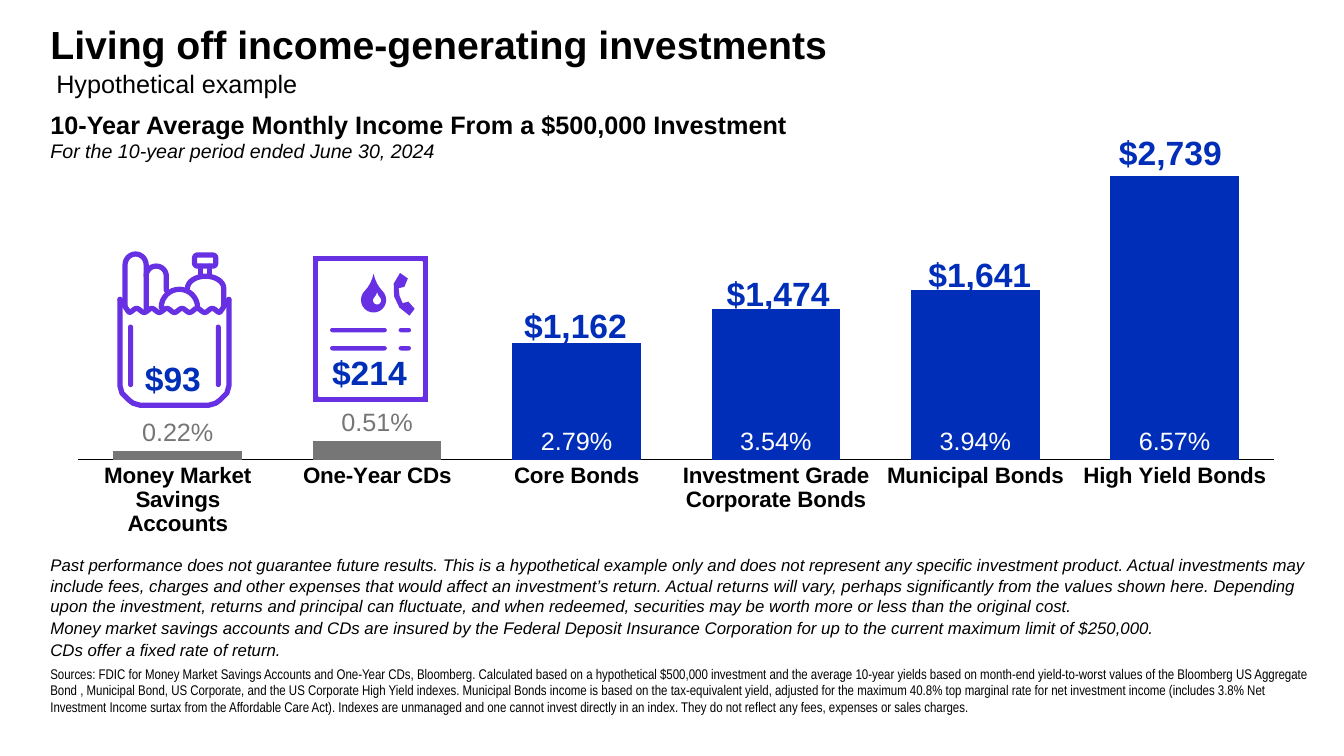
from math import cos, pi, sin

from lxml.etree import SubElement
from pptx import Presentation
from pptx.chart.data import CategoryChartData
from pptx.dml.color import RGBColor
from pptx.enum.chart import XL_CHART_TYPE, XL_LABEL_POSITION, XL_TICK_MARK
from pptx.enum.shapes import MSO_SHAPE
from pptx.enum.text import MSO_ANCHOR, PP_ALIGN
from pptx.oxml import parse_xml
from pptx.oxml.ns import nsdecls, qn
from pptx.util import Inches, Pt

COLORS = {"black": "000000", "white": "FFFFFF", "blue": "002EB8", "gray": "767676", "purple": "6730E3"}

BARS = [
    ("Money Market Savings Accounts", 0.002, "0.22%"),
    ("One-Year CDs", 0.0043, "0.51%"),
    ("Core Bonds", 0.0265, "2.79%"),
    ("Investment Grade Corporate Bonds", 0.0342, "3.54%"),
    ("Municipal Bonds", 0.0385, "3.94%"),
    ("High Yield Bonds", 0.0644, "6.57%"),
]
SAVINGS_COUNT = 2
CHART_BOX = (0.58, 1.31, 12.17, 4.01)
PLOT_LAYOUT = {"x": 0.016, "y": 0.047, "w": 0.975, "h": 0.767}

HEADINGS = [
    ((0.5, 0.2, 9.5, 0.85), [("Living off income-generating investments", 28, True, False)]),
    ((0.5, 1.08, 9.93, 0.74), [
        ("10-Year Average Monthly Income From a $500,000 Investment", 18, True, False),
        ("For the 10-year period ended June 30, 2024", 14, False, True),
    ]),
]
SUBTITLE = ((0.46, 0.63, 6.55, 0.4), [("Hypothetical example", 18, False, False)])
DISCLOSURES = [
    "Past performance does not guarantee future results. This is a hypothetical example only and does not represent any specific investment product. Actual investments may include fees, charges and other expenses that would affect an investment’s return. Actual returns will vary, perhaps significantly from the values shown here. Depending upon the investment, returns and principal can fluctuate, and when redeemed, securities may be worth more or less than the original cost.",
    "Money market savings accounts and CDs are insured by the Federal Deposit Insurance Corporation for up to the current maximum limit of $250,000.",
    "CDs offer a fixed rate of return.",
]
SOURCES = "Sources: FDIC for Money Market Savings Accounts and One-Year CDs, Bloomberg. Calculated based on a hypothetical $500,000 investment and the average 10-year yields based on month-end yield-to-worst values of the Bloomberg US Aggregate Bond , Municipal Bond, US Corporate, and the US Corporate High Yield indexes. Municipal Bonds income is based on the tax-equivalent yield, adjusted for the maximum 40.8% top marginal rate for net investment income (includes 3.8% Net Investment Income surtax from the Affordable Care Act). Indexes are unmanaged and one cannot invest directly in an index. They do not reflect any fees, expenses or sales charges."

BAG_INCOME = ("$93", (1.23, 3.5, 0.97, 0.5))
BILL_INCOME = ("$214", (3.15, 3.44, 1.03, 0.5))
BOND_INCOMES = [("$1,162", 5.1, 2.98), ("$1,474", 7.11, 2.66), ("$1,641", 9.11, 2.47), ("$2,739", 11, 1.26)]

BAG_CENTER = 1.73
BAG_SIDE = [(1.19, 2.97), (1.19, 3.83), (1.21, 3.9), (1.28, 3.97), (1.32, 4), (1.39, 4.02)]
GROCERIES = [
    {"left": 1.24, "right": 1.45, "spring": 2.63, "rise": 0.11, "feet": (3.03, 3.07)},
    {"left": 1.45, "right": 1.65, "spring": 2.74, "rise": 0.1, "feet": (2.74, 2.88)},
    {"left": 1.6, "right": 1.96, "spring": 3.05, "rise": 0.18, "feet": (3.05, 3.05)},
    {"left": 1.86, "right": 2.22, "spring": 2.86, "rise": 0.12, "feet": (2.86, 3.03)},
]
BOTTLE_CAP = (1.93, 2.53, 0.21, 0.11)
PHONE = [(3.94, 2.88), (3.97, 2.95), (4.02, 3.01), (4.07, 2.98), (4.15, 3.03), (4.12, 3.11), (4, 3.06),
         (3.92, 2.97), (3.88, 2.85), (3.91, 2.73), (4, 2.76), (3.99, 2.85)]


def color(name):
    return RGBColor.from_string(COLORS[name])


def set_font(font, size, name="black", bold=False, italic=False, face="Arial"):
    font.size, font.bold, font.italic, font.name = Pt(size), bold, italic, face
    font.color.rgb = color(name)


def add_text(shapes, box, lines, ink="black", face="Arial", margin=None, anchor=MSO_ANCHOR.TOP,
             align=PP_ALIGN.LEFT, after=0, wrap=True):
    frame = shapes.add_textbox(*map(Inches, box)).text_frame
    frame.word_wrap, frame.vertical_anchor = wrap, anchor
    if margin is not None:
        frame.margin_left = frame.margin_right = frame.margin_top = frame.margin_bottom = Inches(margin)
    for index, (text, size, bold, italic) in enumerate(lines):
        paragraph = frame.add_paragraph() if index else frame.paragraphs[0]
        paragraph.text, paragraph.alignment, paragraph.space_after = text, align, Pt(after)
        set_font(paragraph.font, size, ink, bold, italic, face)


def add_income(shapes, text, box, align=PP_ALIGN.CENTER, wrap=True):
    add_text(shapes, box, [(text, 24, True, False)], "blue", align=align, wrap=wrap)


def paint(shape, fill="purple", line=None, width=0):
    shape.shadow.inherit = False
    if fill:
        shape.fill.solid()
        shape.fill.fore_color.rgb = color(fill)
    else:
        shape.fill.background()
    if line:
        shape.line.color.rgb, shape.line.width = color(line), Pt(width)
        shape._element.spPr.find(qn("a:ln")).set("cap", "rnd")
    else:
        shape.line.fill.background()
    return shape


def add_preset(shapes, kind, box, adjustment, **style):
    shape = paint(shapes.add_shape(kind, *map(Inches, box)), **style)
    shape.adjustments[0] = adjustment
    return shape


def add_path(shapes, points, close=False, **style):
    start, *rest = [(Inches(x), Inches(y)) for x, y in points]
    builder = shapes.build_freeform(*start, scale=1.0)
    builder.add_line_segments(rest, close=close)
    return paint(builder.convert_to_shape(), **style)


def arch(left, right, spring, rise, feet, steps=16):
    middle, radius = (left + right) / 2, (right - left) / 2
    angles = [pi * step / steps for step in range(steps + 1)]
    curve = [(middle - radius * cos(angle), spring - rise * sin(angle)) for angle in angles]
    return [(left, feet[0]), *curve, (right, feet[1])]


def mirrored(points):
    return [(2 * BAG_CENTER - x, y) for x, y in reversed(points)]


def add_bag(shapes):
    torn_edge = [(1.28 + 0.01 * step, 3.08 + 0.02 * cos(2 * pi * step / 15)) for step in range(91)]
    strokes = [BAG_SIDE + mirrored(BAG_SIDE), [BAG_SIDE[0], *torn_edge, mirrored(BAG_SIDE)[-1]]]
    strokes += [arch(**item) for item in GROCERIES]
    strokes += [[(x, 2.64), (x, 2.73)] for x in (1.99, 2.08)]
    style = {"fill": None, "line": "purple", "width": 3.75}
    for points in strokes:
        add_path(shapes, points, **style)
    add_preset(shapes, MSO_SHAPE.ROUNDED_RECTANGLE, BOTTLE_CAP, 0.25, **style)
    for left in (1.27, 2.14):
        add_preset(shapes, MSO_SHAPE.ROUNDED_RECTANGLE, (left, 3.22, 0.05, 0.62), 0.5)


def add_bill(shapes):
    for top in (3.24, 3.42):
        for left, width in ((3.26, 0.59), (3.94, 0.15)):
            add_preset(shapes, MSO_SHAPE.ROUNDED_RECTANGLE, (left, top, width, 0.07), 0.5, line="white", width=1.75)
    for box, point, fill in (((3.58, 2.85, 0.25, 0.25), 1.47, "purple"), ((3.7, 2.94, 0.08, 0.08), 1.4, "white")):
        add_preset(shapes, MSO_SHAPE.TEAR, box, point, fill=fill).rotation = 315
    add_preset(shapes, MSO_SHAPE.FRAME, (3.09, 2.53, 1.17, 1.47), 0.06, line="white", width=1.5)
    add_path(shapes, PHONE, close=True).rotation = 16.4


def add_income_chart(shapes):
    data = CategoryChartData(number_format="0.00%")
    data.categories = [name for name, value, label in BARS]
    data.add_series("Series 1", [value for name, value, label in BARS])
    chart = shapes.add_chart(XL_CHART_TYPE.COLUMN_CLUSTERED, *map(Inches, CHART_BOX), data).chart
    chart.has_legend = chart.has_title = False
    set_font(chart.font, 10)
    plot = chart.plots[0]
    plot.gap_width, plot.overlap, plot.vary_by_categories = 55, 30, False
    values, categories = chart.value_axis, chart.category_axis
    values.minimum_scale, values.maximum_scale = 0, 0.07
    values.has_major_gridlines = values.visible = False
    categories.major_tick_mark = categories.minor_tick_mark = XL_TICK_MARK.NONE
    set_font(categories.tick_labels.font, 16, bold=True)
    categories.format.line.color.rgb, categories.format.line.width = color("black"), Pt(0.75)
    series = plot.series[0]
    series.format.fill.solid()
    series.format.fill.fore_color.rgb = color("blue")
    labels = series.data_labels
    labels.show_value, labels.position, labels.number_format = True, XL_LABEL_POSITION.INSIDE_BASE, "0.00%"
    labels.number_format_is_linked = False
    set_font(labels.font, 18, "white", True)
    for index, (name, value, text) in enumerate(BARS):
        savings = index < SAVINGS_COUNT
        point = series.points[index]
        if savings:
            point.format.fill.solid()
            point.format.fill.fore_color.rgb = color("gray")
        run = point.data_label.text_frame.paragraphs[0].add_run()
        run.text = text
        set_font(run.font, 18, "gray" if savings else "white")
        point.data_label.position = XL_LABEL_POSITION.OUTSIDE_END if savings else XL_LABEL_POSITION.INSIDE_BASE
    area = plot._element.getparent()
    for old in area.findall(qn("c:layout")):
        area.remove(old)
    layout = parse_xml(f"<c:layout {nsdecls('c')}><c:manualLayout/></c:layout>")
    for key, setting in {"layoutTarget": "inner", "xMode": "edge", "yMode": "edge", **PLOT_LAYOUT}.items():
        SubElement(layout[0], qn(f"c:{key}"), val=str(setting))
    area.insert(0, layout)


presentation = Presentation()
presentation.slide_width, presentation.slide_height = Inches(13.33), Inches(7.5)
slide = presentation.slides.add_slide(presentation.slide_layouts[6])
add_income_chart(slide.shapes)
for box, lines in HEADINGS:
    add_text(slide.shapes, box, lines, margin=0)
add_text(slide.shapes, *SUBTITLE)
note_style = {"margin": 0, "anchor": MSO_ANCHOR.BOTTOM, "after": 1.5}
add_text(slide.shapes, (0.5, 6.6, 12.54, 0.5), [(SOURCES, 10, False, False)], face="Arial Narrow", **note_style)
add_text(slide.shapes, (0.5, 5.48, 12.77, 1.07), [(text, 12, False, True) for text in DISCLOSURES], **note_style)
for income, add_icon in ((BAG_INCOME, add_bag), (BILL_INCOME, add_bill)):
    group = slide.shapes.add_group_shape()
    add_income(group.shapes, *income)
    add_icon(group.shapes)
for text, left, top in BOND_INCOMES:
    add_income(slide.shapes, text, (left, top, 1.23, 0.5), PP_ALIGN.LEFT, wrap=False)
presentation.save("out.pptx")
